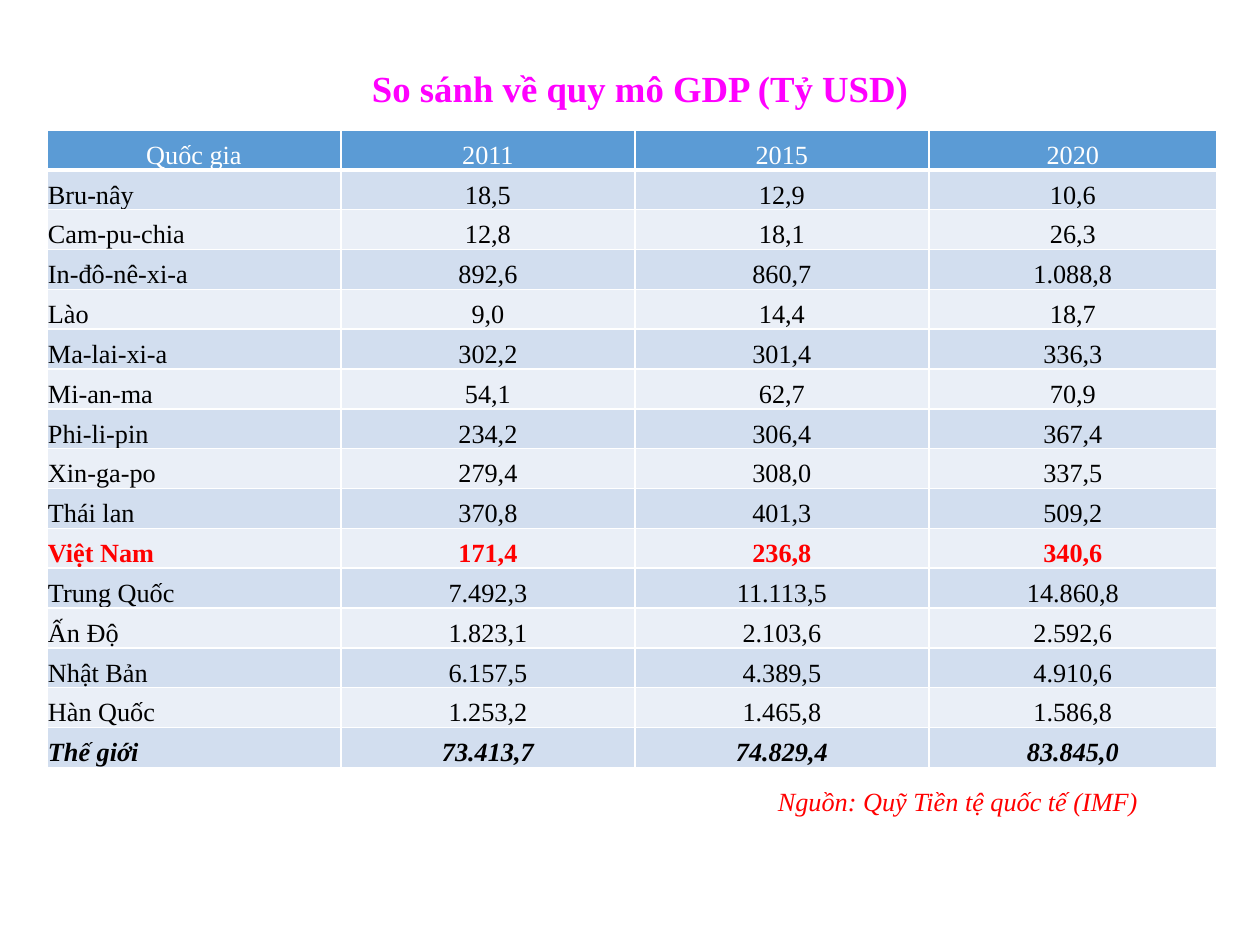
from dataclasses import dataclass
from typing import NamedTuple

from lxml.etree import SubElement
from pptx import Presentation
from pptx.dml.color import RGBColor
from pptx.enum.text import MSO_ANCHOR, MSO_AUTO_SIZE, PP_ALIGN
from pptx.oxml.ns import qn
from pptx.util import Emu, Pt


@dataclass(frozen=True)
class Theme:
    font: str = "Times New Roman"
    title_size: int = 21
    body_size: int = 15
    title: str = "FF00FF"
    accent: str = "FF0000"
    ink: str = "000000"
    paper: str = "FFFFFF"
    header: str = "5B9BD5"
    odd_band: str = "D2DEEF"
    even_band: str = "EAEFF7"
    rule: float = 1
    header_rule: float = 3


class TextStyle(NamedTuple):
    size: int
    color: str
    bold: bool = False
    italic: bool = False


class Area(NamedTuple):
    left: int
    top: int
    width: int
    height: int


class Row(NamedTuple):
    country: str
    gdp_2011: str
    gdp_2015: str
    gdp_2020: str


THEME = Theme()
EMU_PER_PX = 914400 / 126
COLUMN_WIDTHS = (294, 294, 294, 288)
HEADER_STYLE = TextStyle(THEME.body_size, THEME.paper)
BODY_STYLE = TextStyle(THEME.body_size, THEME.ink)
ROW_STYLES = {
    "Việt Nam": TextStyle(THEME.body_size, THEME.accent, bold=True),
    "Thế giới": TextStyle(THEME.body_size, THEME.ink, bold=True, italic=True),
}
ROWS = (
    Row("Quốc gia", "2011", "2015", "2020"),
    Row("Bru-nây", "18,5", "12,9", "10,6"),
    Row("Cam-pu-chia", "12,8", "18,1", "26,3"),
    Row("In-đô-nê-xi-a", "892,6", "860,7", "1.088,8"),
    Row("Lào", "9,0", "14,4", "18,7"),
    Row("Ma-lai-xi-a", "302,2", "301,4", "336,3"),
    Row("Mi-an-ma", "54,1", "62,7", "70,9"),
    Row("Phi-li-pin", "234,2", "306,4", "367,4"),
    Row("Xin-ga-po", "279,4", "308,0", "337,5"),
    Row("Thái lan", "370,8", "401,3", "509,2"),
    Row("Việt Nam", "171,4", "236,8", "340,6"),
    Row("Trung Quốc", "7.492,3", "11.113,5", "14.860,8"),
    Row("Ấn Độ", "1.823,1", "2.103,6", "2.592,6"),
    Row("Nhật Bản", "6.157,5", "4.389,5", "4.910,6"),
    Row("Hàn Quốc", "1.253,2", "1.465,8", "1.586,8"),
    Row("Thế giới", "73.413,7", "74.829,4", "83.845,0"),
)


def px(length: int) -> Emu:
    return Emu(round(length * EMU_PER_PX))


def write(paragraph, text: str, style: TextStyle, alignment: PP_ALIGN) -> None:
    paragraph.text = text
    paragraph.alignment = alignment
    font = paragraph.font
    font.name = THEME.font
    font.size = Pt(style.size)
    font.bold = style.bold
    font.italic = style.italic
    font.color.rgb = RGBColor.from_string(style.color)


def add_text(page, area: Area, text: str, style: TextStyle, alignment: PP_ALIGN):
    box = page.shapes.add_textbox(*map(px, area))
    write(box.text_frame.paragraphs[0], text, style, alignment)
    return box


def draw_borders(cell, bottom: float) -> None:
    properties = cell._tc.get_or_add_tcPr()
    widths = {"lnL": THEME.rule, "lnR": THEME.rule, "lnT": THEME.rule, "lnB": bottom}
    for tag, width in widths.items():
        line = SubElement(properties, qn(f"a:{tag}"), w=str(Pt(width)))
        fill = SubElement(line, qn("a:solidFill"))
        SubElement(fill, qn("a:srgbClr"), val=THEME.paper)


def fill_cell(cell, text: str, style: TextStyle, alignment: PP_ALIGN,
              color: str, bottom: float) -> None:
    draw_borders(cell, bottom)
    cell.fill.solid()
    cell.fill.fore_color.rgb = RGBColor.from_string(color)
    cell.vertical_anchor = MSO_ANCHOR.BOTTOM
    cell.margin_left = cell.margin_right = cell.margin_top = px(1)
    cell.margin_bottom = 0
    write(cell.text_frame.paragraphs[0], text, style, alignment)


def add_gdp_table(page, area: Area) -> None:
    table = page.shapes.add_table(len(ROWS), len(COLUMN_WIDTHS), *map(px, area)).table
    for column, width in zip(table.columns, COLUMN_WIDTHS):
        column.width = px(width)
    for row_index, row in enumerate(ROWS):
        is_header = row_index == 0
        if is_header:
            style, color, bottom = HEADER_STYLE, THEME.header, THEME.header_rule
        else:
            style = ROW_STYLES.get(row.country, BODY_STYLE)
            color = THEME.odd_band if row_index % 2 else THEME.even_band
            bottom = THEME.rule
        for column_index, text in enumerate(row):
            is_name = column_index == 0 and not is_header
            alignment = PP_ALIGN.LEFT if is_name else PP_ALIGN.CENTER
            fill_cell(table.cell(row_index, column_index), text, style, alignment,
                      color, bottom)


def main() -> None:
    deck = Presentation()
    deck.slide_width, deck.slide_height = px(1260), px(945)
    page = deck.slides.add_slide(deck.slide_layouts[6])

    title = add_text(page, Area(92, 26, 1096, 102), "So sánh về quy mô GDP (Tỷ USD)",
                     TextStyle(THEME.title_size, THEME.title, bold=True), PP_ALIGN.CENTER)
    title.fill.solid()
    title.fill.fore_color.rgb = RGBColor.from_string(THEME.paper)
    title.text_frame.word_wrap = True
    title.text_frame.vertical_anchor = MSO_ANCHOR.MIDDLE
    title.text_frame.paragraphs[0].line_spacing = 1.5

    add_gdp_table(page, Area(47, 130, sum(COLUMN_WIDTHS), 638))

    source = add_text(page, Area(769, 780, 389, 42), "Nguồn: Quỹ Tiền tệ quốc tế (IMF)",
                      TextStyle(THEME.body_size, THEME.accent, italic=True), PP_ALIGN.LEFT)
    frame = source.text_frame
    frame.word_wrap = False
    frame.auto_size = MSO_AUTO_SIZE.SHAPE_TO_FIT_TEXT
    frame.margin_left = frame.margin_right = px(9)
    frame.margin_top = frame.margin_bottom = px(5)

    deck.save("out.pptx")


if __name__ == "__main__":
    main()
